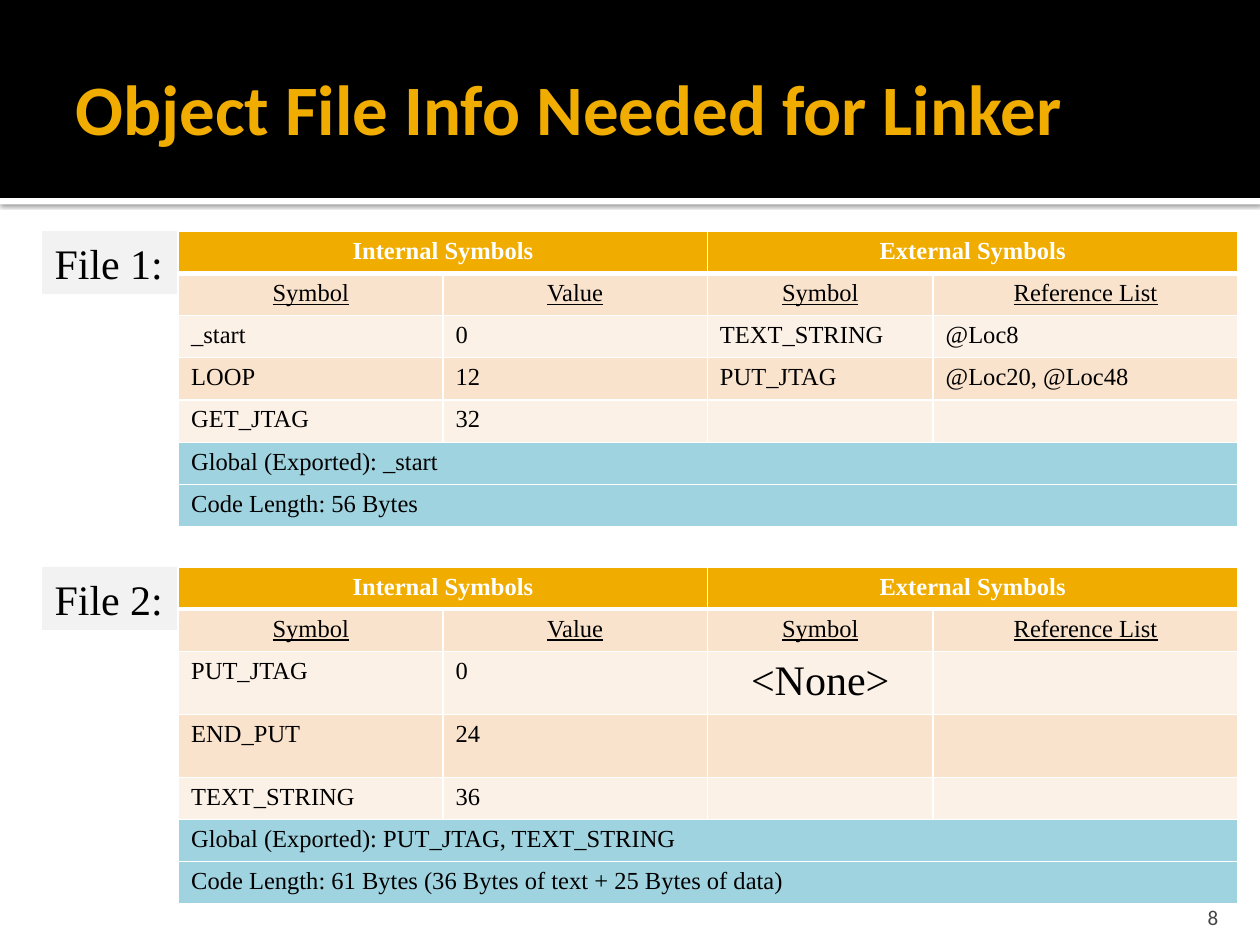
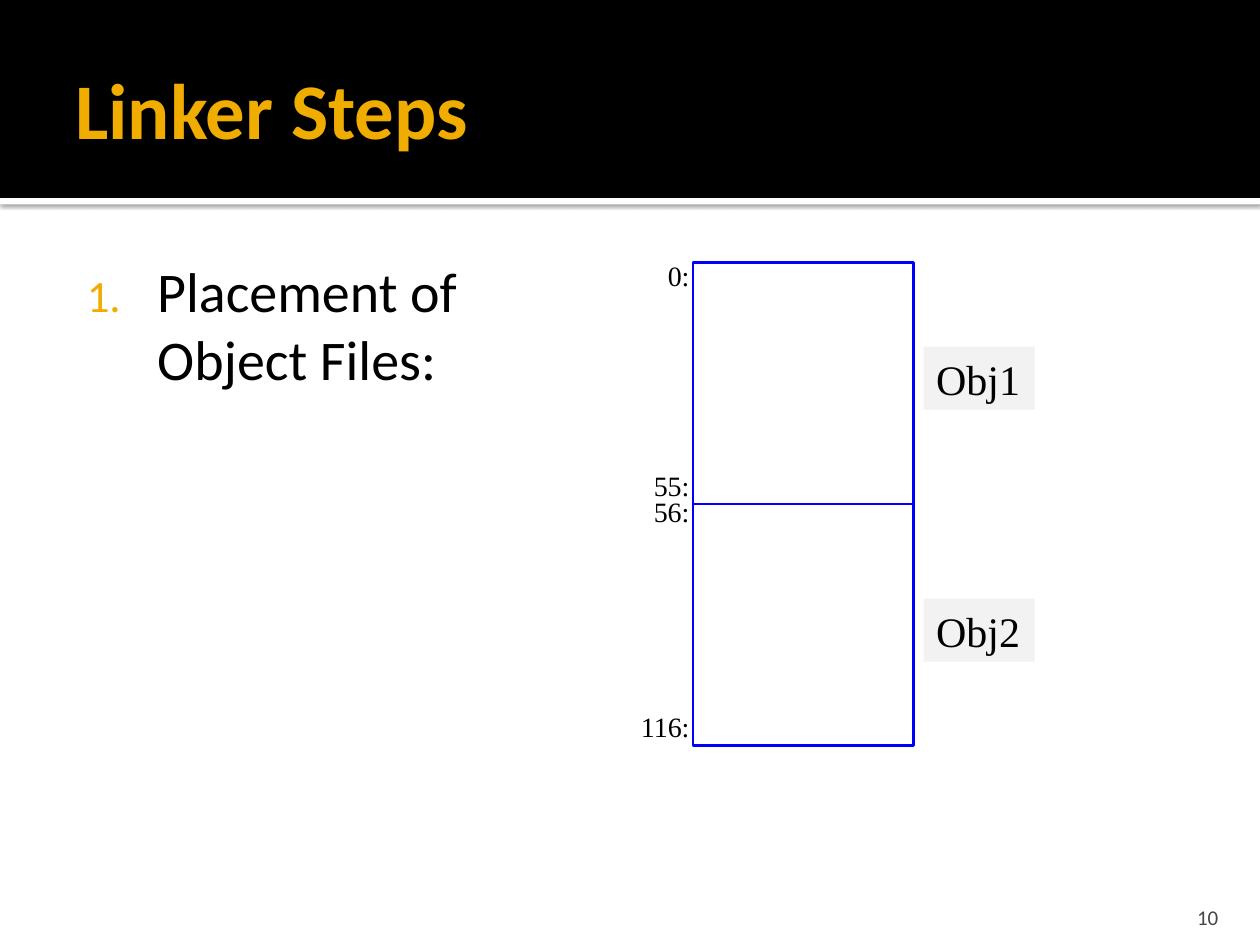
import pptx
import pptx.util
import pptx.dml.color
import pptx.enum.shapes
import pptx.enum.text
import pptx.oxml
import pptx.oxml.ns
from lxml import etree

Cm = pptx.util.Cm
Pt = pptx.util.Pt
Align = pptx.enum.text.PP_ALIGN
Anchor = pptx.enum.text.MSO_ANCHOR
Fit = pptx.enum.text.MSO_AUTO_SIZE
Rect = pptx.enum.shapes.MSO_SHAPE.RECTANGLE
qn = pptx.oxml.ns.qn

COLORS = {
    "black": "000000",
    "white": "FFFFFF",
    "gold": "F0AD00",
    "gray": "454545",
    "label": "F2F2F2",
    "dark": "F9E3CC",
    "light": "FCF1E7",
    "total": "A0D3E0",
    "blue": "0000FF",
}
SANS = "Calibri"
SERIF = "Times New Roman"
COLS = (5.33, 5.33, 4.55, 6.15)
ROW = 0.85
HEADS = ("Symbol", "Value", "Symbol", "Reference List")


def paint(name):
    return pptx.dml.color.RGBColor.from_string(COLORS[name])


class Deck:
    def __init__(self):
        self.show = pptx.Presentation()
        self.show.slide_width = Cm(25.4)
        self.show.slide_height = Cm(19.05)
        self.slide = None

    def page(self, title, size, number):
        self.slide = self.show.slides.add_slide(self.show.slide_layouts[6])
        strip = self.rect((0, 3.99, 25.4, 0.13), fill="white")
        self.shade(strip)
        self.rect((0, 0, 25.4, 3.99), fill="black")
        self.text((1.27, 0.43, 22.86, 3.48), title, size, SANS, "gold", bold=True,
                  anchor=Anchor.MIDDLE, pad=(0.25, 0.13, 0.13, 0.13))
        self.text((22.78, 17.98, 2.03, 0.76), number, 12, SANS, "gray",
                  align=Align.RIGHT, anchor=Anchor.BOTTOM, pad=(0.25, 0.13, 0.25, 0))

    def rect(self, area, fill=None, line=None):
        shape = self.slide.shapes.add_shape(Rect, *map(Cm, area))
        shape.shadow.inherit = False
        if fill:
            shape.fill.solid()
            shape.fill.fore_color.rgb = paint(fill)
        else:
            shape.fill.background()
        if line:
            shape.line.color.rgb = paint(line)
            shape.line.width = Pt(1.5)
        else:
            shape.line.fill.background()
        return shape

    def shade(self, shape):
        effect = shape._element.spPr.find(qn("a:effectLst"))
        outer = etree.SubElement(effect, qn("a:outerShdw"), blurRad=str(Pt(2.5)),
                                 dist=str(Pt(0.8)), dir="5400000", rotWithShape="0")
        color = etree.SubElement(outer, qn("a:srgbClr"), val=COLORS["black"])
        etree.SubElement(color, qn("a:alpha"), val="60000")

    def run(self, para, text, size, font, color, bold=False, under=False):
        run = para.add_run()
        run.text = text
        run.font.size = Pt(size)
        run.font.name = font
        run.font.bold = bold
        run.font.underline = under
        run.font.color.rgb = paint(color)

    def text(self, area, text, size, font, color, bold=False, align=Align.LEFT,
             anchor=Anchor.TOP, pad=(0.25, 0.13, 0.25, 0.13), wrap=True):
        box = self.slide.shapes.add_textbox(*map(Cm, area))
        frame = box.text_frame
        frame.word_wrap = wrap
        frame.auto_size = Fit.NONE if wrap else Fit.SHAPE_TO_FIT_TEXT
        frame.vertical_anchor = anchor
        (frame.margin_left, frame.margin_top,
         frame.margin_right, frame.margin_bottom) = map(Cm, pad)
        para = frame.paragraphs[0]
        para.alignment = align
        self.run(para, text, size, font, color, bold)
        return box

    def label(self, area, text):
        box = self.text(area, text, 24, SERIF, "black", wrap=False)
        box.fill.solid()
        box.fill.fore_color.rgb = paint("label")

    def step(self, area, text):
        box = self.text(area, text, 32, SANS, "black", pad=(0.15, 0.25, 0.25, 0.13))
        props = box.text_frame.paragraphs[0]._p.get_or_add_pPr()
        props.set("marL", str(Cm(1.75)))
        props.set("indent", str(Cm(-1.42)))
        color = etree.SubElement(props, qn("a:buClr"))
        etree.SubElement(color, qn("a:srgbClr"), val=COLORS["gold"])
        etree.SubElement(props, qn("a:buSzPct"), val="80000")
        etree.SubElement(props, qn("a:buFont"), typeface=SANS)
        etree.SubElement(props, qn("a:buAutoNum"), type="arabicPeriod")

    def edge(self, cell, top, bottom):
        props = cell._tc.get_or_add_tcPr()
        for side, width in (("L", 1), ("R", 1), ("T", top), ("B", bottom)):
            line = etree.SubElement(props, qn("a:ln" + side), w=str(Pt(width)))
            fill = etree.SubElement(line, qn("a:solidFill"))
            etree.SubElement(fill, qn("a:srgbClr"), val=COLORS["white"])

    def cell(self, cell, text, fill, size=14, color="black", center=False,
             bold=False, under=False):
        cell.fill.solid()
        cell.fill.fore_color.rgb = paint(fill)
        para = cell.text_frame.paragraphs[0]
        if center:
            para.alignment = Align.CENTER
        if text:
            self.run(para, text, size, SERIF, color, bold, under)
        else:
            etree.SubElement(para._p, qn("a:endParaRPr"), sz=str(size * 100))

    def table(self, top, body, totals, tall=()):
        count = 2 + len(body) + len(totals)
        frame = self.slide.shapes.add_table(
            count, len(COLS), Cm(3.6), Cm(top), Cm(sum(COLS)), Cm(ROW * count))
        grid = frame.table
        grid.first_row = grid.horz_banding = False
        for col, width in zip(grid.columns, COLS):
            col.width = Cm(width)
        for i, row in enumerate(grid.rows):
            row.height = Cm(1.27 if i in tall else ROW)
            for cell in row.cells:
                self.edge(cell, 3 if i == 1 else 1, 3 if i == 0 else 1)
        for col, text in ((0, "Internal Symbols"), (2, "External Symbols")):
            grid.cell(0, col).merge(grid.cell(0, col + 1))
            self.cell(grid.cell(0, col), text, "gold", color="white",
                      center=True, bold=True)
        for col, text in enumerate(HEADS):
            self.cell(grid.cell(1, col), text, "dark", center=True, under=True)
        for i, row in enumerate(body, 2):
            for col, text in enumerate(row):
                none = text == "<None>"
                self.cell(grid.cell(i, col), text, "dark" if i % 2 else "light",
                          size=24 if none else 14, center=none)
        for i, text in enumerate(totals, 2 + len(body)):
            grid.cell(i, 0).merge(grid.cell(i, len(COLS) - 1))
            self.cell(grid.cell(i, 0), text, "total")


def symbols(deck):
    deck.page("Object File Info Needed for Linker", 40.5, "8")
    files = (
        (4.66,
         (("_start", "0", "TEXT_STRING", "@Loc8"),
          ("LOOP", "12", "PUT_JTAG", "@Loc20, @Loc48"),
          ("GET_JTAG", "32", "", "")),
         ("Global (Exported): _start", "Code Length: 56 Bytes"), ()),
        (11.43,
         (("PUT_JTAG", "0", "<None>", ""),
          ("END_PUT", "24", "", ""),
          ("TEXT_STRING", "36", "", "")),
         ("Global (Exported): PUT_JTAG, TEXT_STRING",
          "Code Length: 61 Bytes (36 Bytes of text + 25 Bytes of data)"), (2, 3)),
    )
    for i, (top, body, totals, tall) in enumerate(files, 1):
        deck.table(top, body, totals, tall)
        deck.label((0.85, top, 2.72, 1.27), f"File {i}:")


def steps(deck):
    deck.page("Linker Steps", 45, "10")
    deck.step((1.27, 4.93, 8.69, 12.85), "Placement of Object Files:")
    for i in range(2):
        deck.rect((13.97, 5.29 + 4.87 * i, 4.45, 4.87), line="blue")
        deck.label((18.62, 6.99 + 5.08 * i, 2.24, 1.27), f"Obj{i + 1}")
    marks = (("0:", 5.08, 0.97), ("55:", 9.32, 1.24),
             ("56:", 9.83, 1.24), ("116:", 14.17, 1.5))
    for text, top, width in marks:
        deck.text((14.15 - width, top, width, 0.94), text, 16, SERIF, "black",
                  align=Align.RIGHT, wrap=False)


def main():
    deck = Deck()
    symbols(deck)
    steps(deck)
    deck.show.save("out.pptx")


if __name__ == "__main__":
    main()
